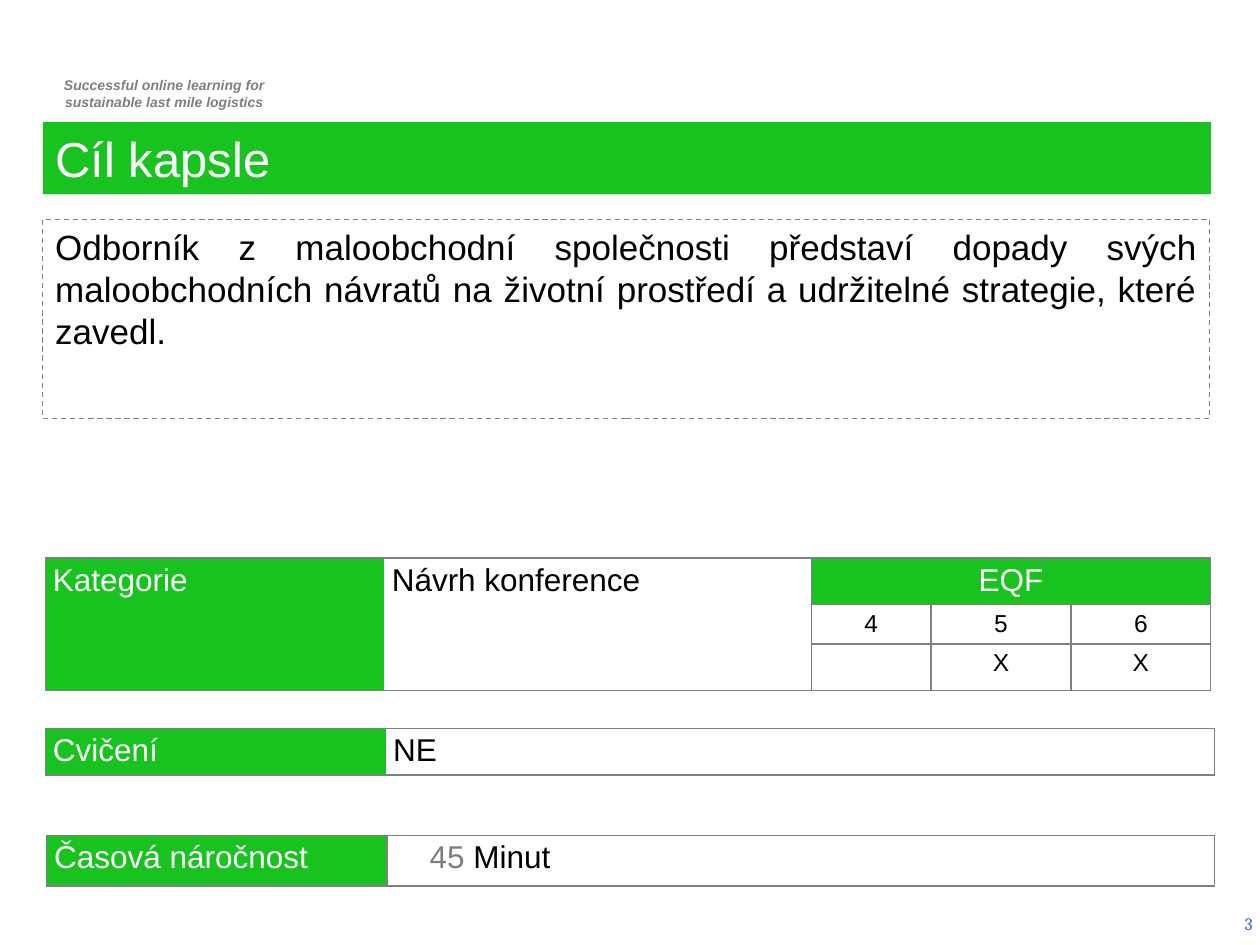
from lxml import etree
from pptx import Presentation
from pptx.dml.color import RGBColor
from pptx.enum import dml, shapes, text
from pptx.oxml.ns import qn
from pptx.util import Inches, Pt

COLORS = {"green": "18C320", "gray": "808080", "muted": "7F7F7F",
          "white": "FFFFFF", "black": "000000", "blue": "3366CC"}
ALIGN = text.PP_ALIGN
ANCHOR = text.MSO_ANCHOR

HEADER = ["Successful online learning for", "sustainable last mile logistics"]
TITLE = "Cíl kapsle"
GOAL = ("Odborník z maloobchodní společnosti představí dopady svých maloobchodních "
        "návratů na životní prostředí a udržitelné strategie, které zavedl.")
PAGE = "3"

LABEL = {"size": 18, "color": "white", "align": ALIGN.JUSTIFY}
VALUE = {"size": 18, "color": "black", "align": ALIGN.JUSTIFY}
LEVEL = {"size": 14, "color": "black", "align": ALIGN.CENTER}

TABLES = [
    {"at": (0.36, 4.43), "columns": [2.69, 3.39, 0.95, 1.11, 1.11],
     "rows": [0.37, 0.31, 0.37], "divider": False,
     "merges": [(0, 0, 2, 0), (0, 1, 2, 1), (0, 2, 0, 4)], "green": [(0, 0), (0, 2)],
     "cells": {(0, 0): ("Kategorie", LABEL), (0, 1): ("Návrh konference", VALUE),
               (0, 2): ("EQF", {**LABEL, "align": ALIGN.CENTER}),
               (1, 2): ("4", LEVEL), (1, 3): ("5", LEVEL), (1, 4): ("6", LEVEL),
               (2, 3): ("X", LEVEL), (2, 4): ("X", LEVEL)}},
    {"at": (0.36, 5.78), "columns": [2.7, 6.58], "rows": [0.37], "divider": False,
     "merges": [], "green": [(0, 0)],
     "cells": {(0, 0): ("Cvičení", LABEL), (0, 1): ("NE", VALUE)}},
    {"at": (0.37, 6.63), "columns": [2.7, 6.57], "rows": [0.4], "divider": True,
     "merges": [], "green": [(0, 0)], "indent": {(0, 1): 0.28},
     "cells": {(0, 0): ("Časová náročnost", LABEL),
               (0, 1): ([("45 ", "muted"), ("Minut", "black")], VALUE)}},
]


def rgb(name):
    return RGBColor.from_string(COLORS[name])


def write(paragraph, content, size=18, color="black", align=ALIGN.LEFT,
          font="Arial", bold=False, italic=False):
    paragraph.alignment = align
    runs = [(content, color)] if isinstance(content, str) else content
    for words, run_color in runs:
        run = paragraph.add_run()
        run.text = words
        run.font.name = font
        run.font.size = Pt(size)
        run.font.bold = bold
        run.font.italic = italic
        run.font.color.rgb = rgb(run_color)


def prepare_frame(shape, anchor=ANCHOR.TOP):
    frame = shape.text_frame
    frame.word_wrap = True
    frame.auto_size = text.MSO_AUTO_SIZE.NONE
    frame.vertical_anchor = anchor
    return frame


def set_border(cell, side, visible):
    line = etree.SubElement(cell._tc.get_or_add_tcPr(), qn(f"a:ln{side}"), w=str(Pt(1)))
    if visible:
        fill = etree.SubElement(line, qn("a:solidFill"))
        etree.SubElement(fill, qn("a:srgbClr"), val=COLORS["gray"])
    else:
        etree.SubElement(line, qn("a:noFill"))


def add_table(slide, data):
    columns, rows = data["columns"], data["rows"]
    left, top = data["at"]
    table = slide.shapes.add_table(len(rows), len(columns), Inches(left), Inches(top),
                                   Inches(sum(columns)), Inches(sum(rows))).table
    table.first_row = table.horz_banding = False
    for column, width in zip(table.columns, columns):
        column.width = Inches(width)
    for row, height in zip(table.rows, rows):
        row.height = Inches(height)
    for first_row, first_column, last_row, last_column in data["merges"]:
        table.cell(first_row, first_column).merge(table.cell(last_row, last_column))
    for row in range(len(rows)):
        for column in range(len(columns)):
            cell = table.cell(row, column)
            for side in "LRTB":
                hidden = (column, side) in [(0, "R"), (1, "L")] and not data["divider"]
                set_border(cell, side, not hidden)
            if (row, column) in data["green"]:
                cell.fill.solid()
                cell.fill.fore_color.rgb = rgb("green")
            else:
                cell.fill.background()
            indent = data.get("indent", {}).get((row, column), 0)
            cell.margin_left = Inches(0.06 + indent)
            cell.margin_right = Inches(0.06)
            cell.margin_top = cell.margin_bottom = Inches(0.04)
            content, style = data["cells"].get((row, column), ("", LEVEL))
            paragraph = cell.text_frame.paragraphs[0]
            if content:
                write(paragraph, content, **style)
            else:
                paragraph.font.size = Pt(style["size"])


def main():
    presentation = Presentation()
    presentation.slide_width, presentation.slide_height = Inches(10), Inches(7.5)
    slide = presentation.slides.add_slide(presentation.slide_layouts[5])

    title = slide.shapes.title
    title.left, title.top, title.width, title.height = map(Inches, (0.34, 0.97, 9.27, 0.57))
    title.fill.solid()
    title.fill.fore_color.rgb = rgb("green")
    write(prepare_frame(title).paragraphs[0], TITLE, size=28, color="white")

    header = slide.shapes.add_textbox(*map(Inches, (0.29, 0.56, 2.03, 0.37)))
    frame = prepare_frame(header)
    for index, line in enumerate(HEADER):
        paragraph = frame.add_paragraph() if index else frame.paragraphs[0]
        write(paragraph, line, size=8, color="muted", align=ALIGN.CENTER,
              bold=True, italic=True)

    goal = slide.shapes.add_shape(shapes.MSO_SHAPE.RECTANGLE,
                                  *map(Inches, (0.34, 1.74, 9.26, 1.58)))
    goal.shadow.inherit = False
    goal.fill.background()
    goal.line.color.rgb = rgb("gray")
    goal.line.width = Pt(0.75)
    goal.line.dash_style = dml.MSO_LINE.DASH
    write(prepare_frame(goal).paragraphs[0], GOAL, size=20, align=ALIGN.JUSTIFY)

    for data in TABLES:
        add_table(slide, data)

    page = slide.shapes.add_textbox(*map(Inches, (7.71, 7.13, 2.33, 0.4)))
    write(prepare_frame(page, ANCHOR.MIDDLE).paragraphs[0], PAGE, size=10,
          color="blue", align=ALIGN.RIGHT, font="Cambria")

    presentation.save("out.pptx")


if __name__ == "__main__":
    main()
